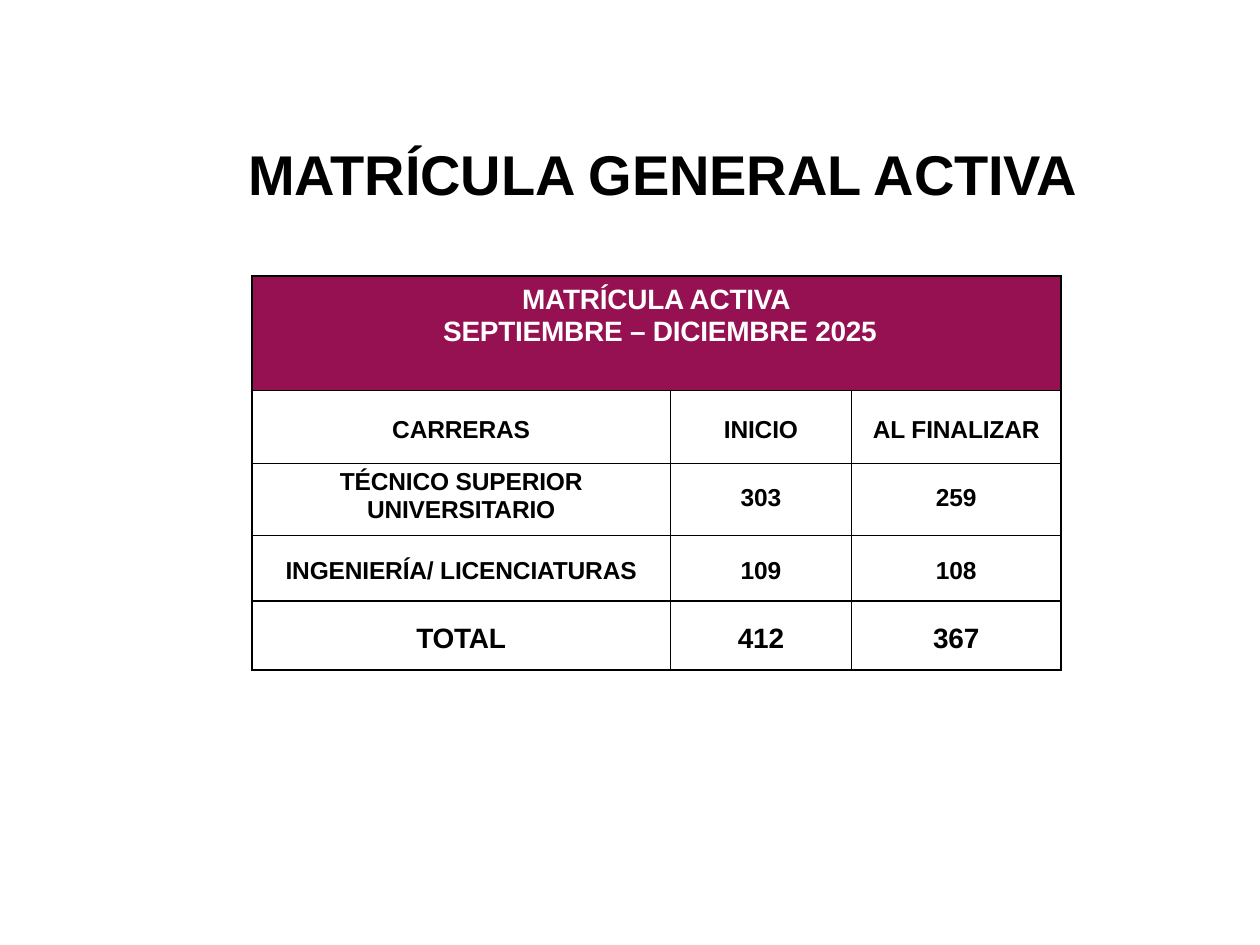
from dataclasses import dataclass

from lxml.etree import SubElement
from pptx import Presentation
from pptx.dml.color import RGBColor
from pptx.enum.text import MSO_ANCHOR, PP_ALIGN
from pptx.oxml.ns import qn
from pptx.util import Inches, Pt


@dataclass(frozen=True)
class Theme:
    font: str = "Arial"
    black: str = "000000"
    white: str = "FFFFFF"
    maroon: str = "951151"
    title_size: float = 32
    large_size: float = 16
    body_size: float = 14
    border_width: float = 1
    tracking: float = -0.1


class SlideBuilder:
    def __init__(self, presentation, theme):
        self.theme = theme
        self.slide = presentation.slides.add_slide(presentation.slide_layouts[6])

    def set_text(self, paragraph, text, size, color, alignment):
        run = paragraph.add_run()
        run.text = text
        run._r.get_or_add_rPr().set("spc", str(round(self.theme.tracking * 100)))
        paragraph.alignment = alignment
        font = paragraph.font
        font.name = self.theme.font
        font.size = Pt(size)
        font.bold = True
        font.color.rgb = RGBColor.from_string(color)

    def title(self, text, left, top, width, height, left_inset, top_inset):
        box = self.slide.shapes.add_textbox(
            Inches(left), Inches(top), Inches(width), Inches(height))
        frame = box.text_frame
        frame.word_wrap = True
        frame.margin_left, frame.margin_top = Inches(left_inset), Inches(top_inset)
        frame.margin_right = frame.margin_bottom = 0
        self.set_text(frame.paragraphs[0], text, self.theme.title_size,
                      self.theme.black, PP_ALIGN.LEFT)

    def table(self, left, top, column_widths, row_heights):
        shape = self.slide.shapes.add_table(
            len(row_heights), len(column_widths), Inches(left), Inches(top),
            Inches(sum(column_widths)), Inches(sum(row_heights)))
        table = shape.table
        table.first_row = table.horz_banding = False
        for column, width in zip(table.columns, column_widths):
            column.width = Inches(width)
        for row, height in zip(table.rows, row_heights):
            row.height = Inches(height)
        return table

    def borders(self, cell):
        properties = cell._tc.get_or_add_tcPr()
        for side in ("a:lnL", "a:lnR", "a:lnT", "a:lnB"):
            line = SubElement(properties, qn(side), w=str(Pt(self.theme.border_width)))
            fill = SubElement(line, qn("a:solidFill"))
            SubElement(fill, qn("a:srgbClr"), val=self.theme.black)

    def cell(self, cell, lines, size, color, top_inset, anchor, fill=None):
        self.borders(cell)
        if fill:
            cell.fill.solid()
            cell.fill.fore_color.rgb = RGBColor.from_string(fill)
        else:
            cell.fill.background()
        cell.vertical_anchor = anchor
        cell.margin_left = cell.margin_right = cell.margin_bottom = 0
        cell.margin_top = Inches(top_inset)
        frame = cell.text_frame
        for index, text in enumerate(lines):
            paragraph = frame.add_paragraph() if index else frame.paragraphs[0]
            self.set_text(paragraph, text, size, color, PP_ALIGN.CENTER)


def main():
    theme = Theme()
    presentation = Presentation()
    presentation.slide_width, presentation.slide_height = Inches(10), Inches(7.5)
    builder = SlideBuilder(presentation, theme)

    table = builder.table(2, 2.19, [3.32, 1.44, 1.66], [0.91, 0.58, 0.57, 0.52, 0.55])
    table.cell(0, 0).merge(table.cell(0, 2))
    heading = ["MATRÍCULA ACTIVA", "SEPTIEMBRE – DICIEMBRE 2025"]
    for column in range(3):
        builder.cell(table.cell(0, column), [] if column else heading, theme.large_size,
                     theme.white, 0.07, MSO_ANCHOR.TOP, theme.maroon)
    period = table.cell(0, 0).text_frame.paragraphs[1]
    period._p.get_or_add_pPr().set("marL", str(Inches(0.06)))

    middle, high = MSO_ANCHOR.MIDDLE, MSO_ANCHOR.TOP
    # Texts, type size, anchor, top inset of the names, top inset of the figures
    enrolment_rows = [
        (["CARRERAS", "INICIO", "AL FINALIZAR"], theme.body_size, middle, 0.04, 0.04),
        (["TÉCNICO SUPERIOR UNIVERSITARIO", "303", "259"], theme.body_size, high, 0.04, 0.16),
        (["INGENIERÍA/ LICENCIATURAS", "109", "108"], theme.body_size, middle, 0.04, 0.04),
        (["TOTAL", "412", "367"], theme.large_size, middle, 0.05, 0.05),
    ]
    for row, (texts, size, anchor, name_inset, figure_inset) in enumerate(enrolment_rows, 1):
        for column, text in enumerate(texts):
            builder.cell(table.cell(row, column), [text], size, theme.black,
                         figure_inset if column else name_inset, anchor)

    builder.title("MATRÍCULA GENERAL ACTIVA", 0.5, 0.42, 8.17, 1.33,
                  left_inset=1.47, top_inset=0.84)
    presentation.save("out.pptx")


if __name__ == "__main__":
    main()
